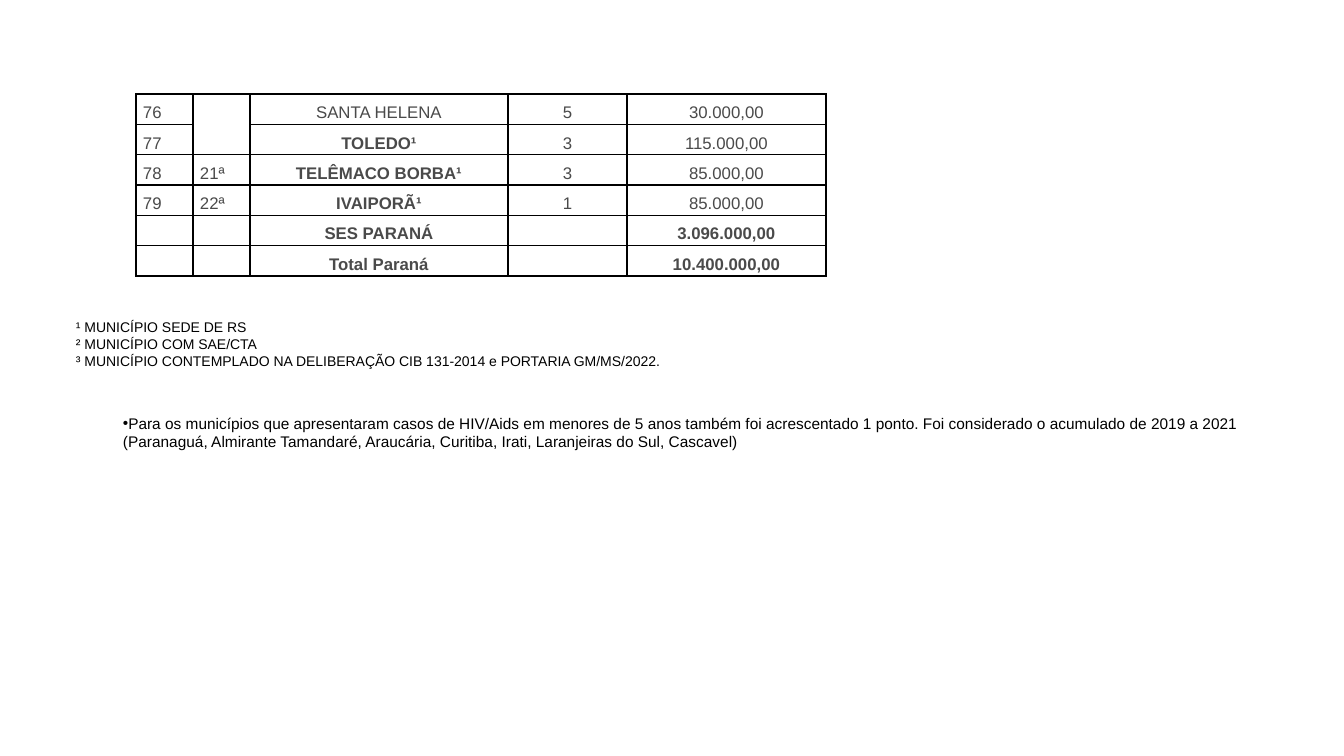
from lxml import etree
from pptx import Presentation
from pptx.dml.color import RGBColor
from pptx.enum.text import PP_ALIGN
from pptx.oxml.ns import qn
from pptx.util import Emu, Pt

LEFT, CENTER, JUSTIFY = PP_ALIGN.LEFT, PP_ALIGN.CENTER, PP_ALIGN.JUSTIFY
BLACK = RGBColor(0x00, 0x00, 0x00)
GRAY = RGBColor(0x4A, 0x4A, 0x4A)
EMU_PER_PX = 914400 / 100.8
FONT = "Arial"

COLUMN_WIDTHS = [57, 57, 258, 119, 199]
COLUMN_ALIGNS = [JUSTIFY, JUSTIFY, CENTER, CENTER, CENTER]
MUNICIPALITIES = [
    ("76", "", "SANTA HELENA", "5", "30.000,00"),
    ("77", "", "TOLEDO¹", "3", "115.000,00"),
    ("78", "21ª", "TELÊMACO BORBA¹", "3", "85.000,00"),
    ("79", "22ª", "IVAIPORÃ¹", "1", "85.000,00"),
    ("", "", "SES PARANÁ", "", "3.096.000,00"),
    ("", "", "Total Paraná", "", "10.400.000,00"),
]
FOOTNOTES = [
    "¹ MUNICÍPIO SEDE DE RS",
    "² MUNICÍPIO COM SAE/CTA",
    "³ MUNICÍPIO CONTEMPLADO NA DELIBERAÇÃO CIB 131-2014 e PORTARIA GM/MS/2022.",
]
CRITERIA = [
    "Para os municípios que apresentaram casos de HIV/Aids em menores de 5 anos "
    "também foi acrescentado 1 ponto. Foi considerado o acumulado de 2019 a 2021",
    "(Paranaguá, Almirante Tamandaré, Araucária, Curitiba, Irati, "
    "Laranjeiras do Sul, Cascavel)",
]


def px(length):
    """Convert pixels to EMU."""
    return Emu(round(length * EMU_PER_PX))


def write(paragraph, text, size, color=BLACK, bold=False, align=LEFT,
          line_spacing=None, space_after=None, bullet=None):
    """Fill a paragraph with one formatted run."""
    if bullet:
        properties = paragraph._p.get_or_add_pPr()
        properties.set("marL", "0")
        properties.set("indent", "0")
        etree.SubElement(properties, qn("a:buFont"), typeface=FONT)
        etree.SubElement(properties, qn("a:buChar"), char=bullet)
    paragraph.alignment = align
    if line_spacing:
        paragraph.line_spacing = line_spacing
    if space_after:
        paragraph.space_after = space_after
    run = paragraph.add_run()
    run.text = text
    run.font.name = FONT
    run.font.size = Pt(size)
    run.font.bold = bold
    run.font.color.rgb = color


def add_borders(cell):
    """Draw a thin black line on each side of a table cell."""
    properties = cell._tc.get_or_add_tcPr()
    for side in ("a:lnL", "a:lnR", "a:lnT", "a:lnB"):
        line = etree.SubElement(properties, qn(side), w=str(Pt(1)))
        fill = etree.SubElement(line, qn("a:solidFill"))
        etree.SubElement(fill, qn("a:srgbClr"), val=str(BLACK))


def add_funding_table(slide, left, top, width, height):
    """Place the table of municipalities and amounts in its box."""
    row_count = len(MUNICIPALITIES)
    table = slide.shapes.add_table(row_count, len(COLUMN_WIDTHS), px(left), px(top),
                                   px(width), px(height)).table
    table.first_row = False
    table.horz_banding = False
    for column, share in zip(table.columns, COLUMN_WIDTHS):
        column.width = px(width * share / sum(COLUMN_WIDTHS))
    for row in table.rows:
        row.height = px(height / row_count)
    table.cell(0, 1).merge(table.cell(1, 1))

    for row_index, values in enumerate(MUNICIPALITIES):
        is_total = not values[0]
        for column_index, value in enumerate(values):
            cell = table.cell(row_index, column_index)
            cell.margin_left = cell.margin_right = px(7)
            cell.margin_top = cell.margin_bottom = 0
            add_borders(cell)
            cell.fill.background()
            if value:
                is_seat = column_index == 2 and value.endswith("¹")
                write(cell.text_frame.paragraphs[0], value, 12, color=GRAY,
                      bold=is_total or is_seat, align=COLUMN_ALIGNS[column_index],
                      line_spacing=1.5, space_after=Pt(10.7))


def add_notes_block(slide, left, top, width, height, lines, size, first_bullet=None):
    """Place a block of note lines in its box, the first one optionally bulleted."""
    frame = slide.shapes.add_textbox(px(left), px(top), px(width), px(height)).text_frame
    frame.word_wrap = True
    for index, line in enumerate(lines):
        paragraph = frame.add_paragraph() if index else frame.paragraphs[0]
        write(paragraph, line, size, bullet=None if index else first_bullet)


def main():
    """Build the slide and save it."""
    presentation = Presentation()
    presentation.slide_width = px(1344)
    presentation.slide_height = px(756)
    slide = presentation.slides.add_slide(presentation.slide_layouts[6])
    add_notes_block(slide, 66, 314, 613, 78, FOOTNOTES, 10)
    add_notes_block(slide, 113, 409, 1157, 47, CRITERIA, 11, first_bullet="•")
    add_funding_table(slide, 136, 94, 690, 182)
    presentation.save("out.pptx")


if __name__ == "__main__":
    main()
